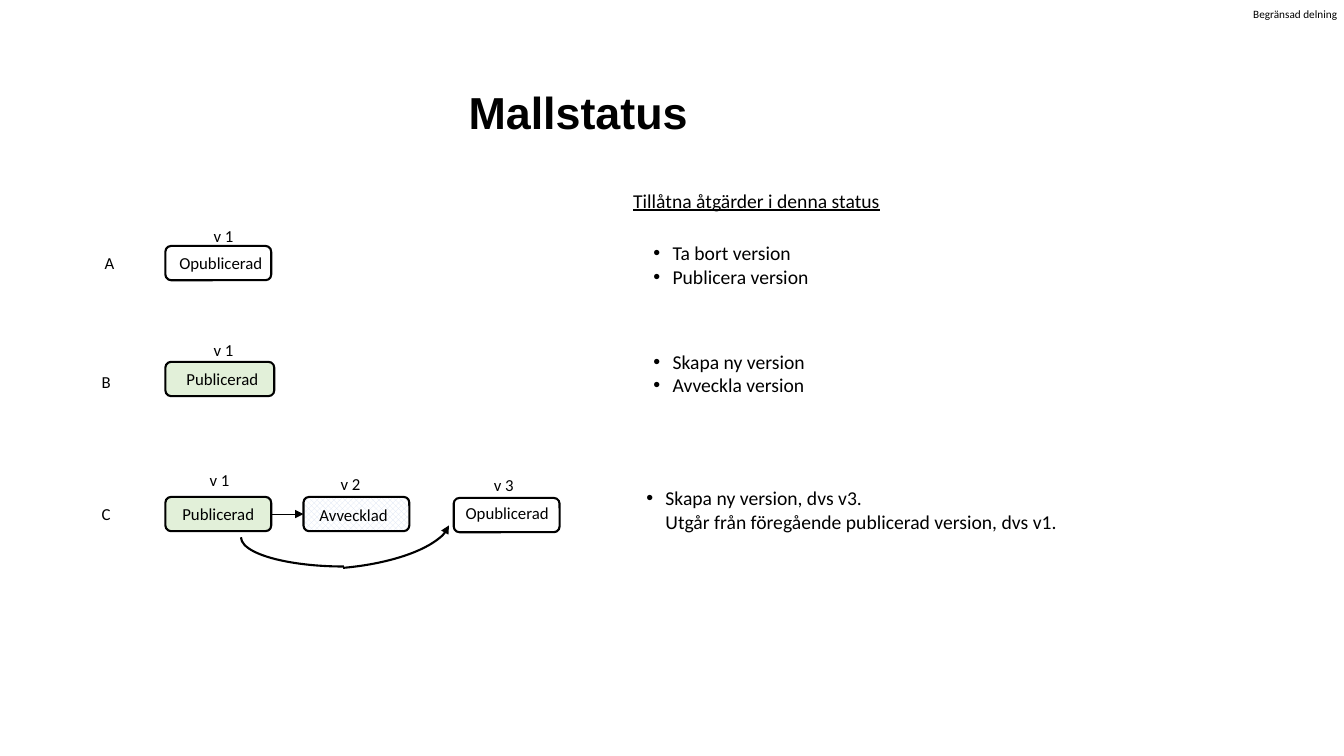
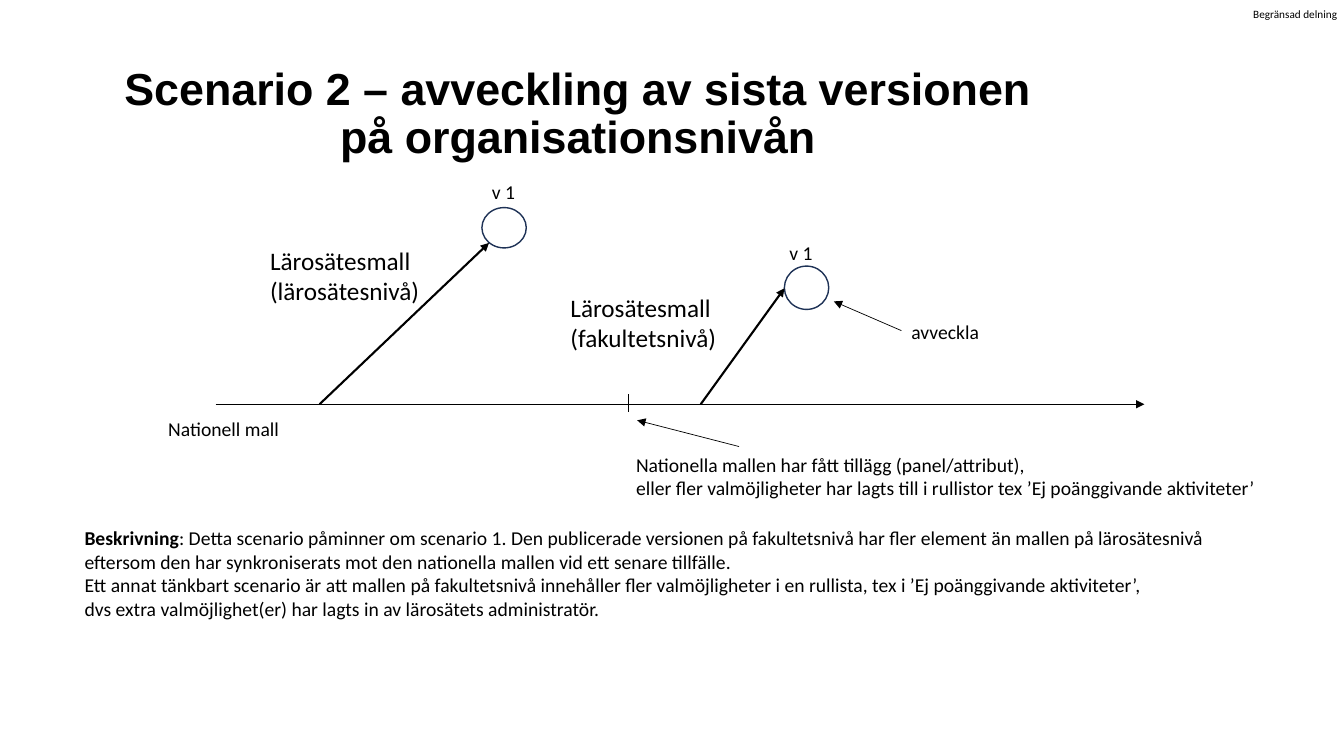
"""Build two slides on template statuses and a template versioning scenario."""
import copy
from dataclasses import dataclass

import lxml.etree
import pptx
import pptx.dml.color
import pptx.enum.dml
import pptx.enum.shapes
import pptx.enum.text
import pptx.oxml.ns
import pptx.presentation
import pptx.shapes.autoshape
import pptx.shapes.connector
import pptx.slide
import pptx.text.text
import pptx.util

EMU_PER_PX = 9144
BLACK, WHITE, GREEN, PALE_BLUE, NAVY = "000000", "FFFFFF", "E2F0D9", "DAE3F3", "1E3256"
BODY_FONT, TITLE_FONT = "Calibri", "Arial"
SHAPES = pptx.enum.shapes.MSO_SHAPE
ALIGN = pptx.enum.text.PP_ALIGN
ANCHOR = pptx.enum.text.MSO_ANCHOR
TITLE_ONLY_LAYOUT, COMPARISON_LAYOUT = 5, 4
STATUS_LEFT, STATUS_HEIGHT = 164, 34
LIST_INDENT = 19
TIMELINE_Y = 401


@dataclass(frozen=True)
class Label:
    """A piece of text and the box that holds it."""

    text: str
    left: int
    top: int
    width: int
    height: int = 30
    size: int = 12


@dataclass(frozen=True)
class Status:
    """A version box with its fill, its name and its version number."""

    left: int
    top: int
    width: int
    fill: str | None
    name: Label
    version: Label


@dataclass(frozen=True)
class Stroke:
    """A straight line, with or without an arrowhead at its end."""

    start: tuple[int, int]
    end: tuple[int, int]
    width: float = 0.5
    arrow: bool = True


STATUSES = [
    Status(STATUS_LEFT, 244, 105, None, Label("Opublicerad", 168, 246, 110), Label("v 1", 202, 219, 50)),
    Status(STATUS_LEFT, 359, 108, GREEN, Label("Publicerad", 175, 361, 108), Label("v 1", 202, 332, 50)),
    Status(STATUS_LEFT, 493, 105, GREEN, Label("Publicerad", 171, 495, 105), Label("v 1", 198, 461, 50)),
    Status(301, 493, 105, PALE_BLUE, Label("Avvecklad", 307, 496, 105), Label("v 2", 328, 465, 50)),
    Status(450, 494, 105, None, Label("Opublicerad", 452, 494, 110), Label("v 3", 480, 466, 50)),
]
ROW_LETTERS = [Label("A", 94, 246, 40), Label("B", 91, 364, 40), Label("C", 91, 495, 40)]
ACTIONS_HEADING = Label("Tillåtna åtgärder i denna status", 618, 182, 300, 34, 14)
ACTION_LISTS = [
    Label("Ta bort version\nPublicera version", 638, 234, 220, 57, 14),
    Label("Skapa ny version\nAvveckla version", 638, 342, 220, 57, 14),
    Label("Skapa ny version, dvs v3.\vUtgår från föregående publicerad version, dvs v1.", 631, 477, 450, 57, 14),
]
SCENARIO_LABELS = [
    Label("v 1", 478, 174, 60, 34, 14),
    Label("v 1", 773, 234, 60, 34, 14),
    Label("Nationell mall", 157, 409, 177, 34, 14),
    Label("avveckla", 894, 312, 100, 34, 14),
    Label("Lärosätesmall\v(lärosätesnivå)", 258, 238, 190, 71, 18),
    Label("Lärosätesmall\v(fakultetsnivå)", 556, 285, 190, 71, 18),
    Label("Nationella mallen har fått tillägg (panel/attribut),\veller fler valmöjligheter har lagts till "
          "i rullistor tex ’Ej poänggivande aktiviteter’", 621, 444, 669, 57, 14),
]
DESCRIPTION = Label("Beskrivning", 74, 517, 1180, 104, 14)
DESCRIPTION_LINES = [
    ": Detta scenario påminner om scenario 1. Den publicerade versionen på fakultetsnivå har fler element "
    "än mallen på lärosätesnivå",
    "eftersom den har synkroniserats mot den nationella mallen vid ett senare tillfälle.",
    "Ett annat tänkbart scenario är att mallen på fakultetsnivå innehåller fler valmöjligheter i en rullista, "
    "tex i ’Ej poänggivande aktiviteter’,",
    "dvs extra valmöjlighet(er) har lagts in av lärosätets administratör.",
]
VERSION_CIRCLES = [(478, 206, 44, 40), (778, 264, 44, 43)]
SCENARIO_STROKES = [
    Stroke((214, TIMELINE_Y), (1135, TIMELINE_Y)),
    Stroke((317, TIMELINE_Y), (485, 241), 1.5),
    Stroke((695, TIMELINE_Y), (778, 286), 1.5),
    Stroke((894, 328), (827, 299)),
    Stroke((623, 391), (623, 409), arrow=False),
    Stroke((733, 443), (632, 417)),
]


def px(value: int) -> pptx.util.Emu:
    """Turn px into EMU."""
    return pptx.util.Emu(value * EMU_PER_PX)


def color(value: str) -> pptx.dml.color.RGBColor:
    """Turn a hex string into a colour."""
    return pptx.dml.color.RGBColor.from_string(value)


def place(shape: pptx.shapes.autoshape.Shape, left: int, top: int, width: int, height: int) -> None:
    """Move and size a shape."""
    shape.left, shape.top, shape.width, shape.height = px(left), px(top), px(width), px(height)


def format_text(frame: pptx.text.text.TextFrame, size: int, font: str = BODY_FONT,
                bold: bool = False, underline: bool = False) -> None:
    """Format every run and line break of a text frame."""
    frame.word_wrap = True
    frame.auto_size = pptx.enum.text.MSO_AUTO_SIZE.NONE
    for paragraph in frame.paragraphs:
        paragraph.space_before = pptx.util.Pt(0)
        for run in paragraph.runs:
            run.font.name, run.font.size = font, pptx.util.Pt(size)
            run.font.bold, run.font.underline = bold, underline
            run.font.color.rgb = color(BLACK)
        properties = paragraph.runs[-1].font._element
        for line_break in paragraph._p.findall(pptx.oxml.ns.qn("a:br")):
            line_break.insert(0, copy.deepcopy(properties))


def add_label(slide: pptx.slide.Slide, label: Label) -> pptx.shapes.autoshape.Shape:
    """Add a text box."""
    box = slide.shapes.add_textbox(px(label.left), px(label.top), px(label.width), px(label.height))
    box.text_frame.text = label.text
    format_text(box.text_frame, label.size)
    return box


def fill_placeholder(shape: pptx.shapes.autoshape.Shape, label: Label, bullets: bool) -> None:
    """Write a bulleted list or an underlined heading in a body placeholder."""
    place(shape, label.left, label.top, label.width, label.height)
    frame = shape.text_frame
    frame.text = label.text
    frame.vertical_anchor = ANCHOR.TOP
    if bullets:
        for paragraph in frame.paragraphs:
            properties = paragraph._p.get_or_add_pPr()
            properties.set("marL", str(px(LIST_INDENT)))
            properties.set("indent", str(-px(LIST_INDENT)))
            lxml.etree.SubElement(properties, pptx.oxml.ns.qn("a:buFont")).set("typeface", TITLE_FONT)
            lxml.etree.SubElement(properties, pptx.oxml.ns.qn("a:buChar")).set("char", "•")
    format_text(frame, label.size, underline=not bullets)


def add_outline(slide: pptx.slide.Slide, kind: pptx.enum.shapes.MSO_SHAPE, left: int, top: int, width: int,
                height: int, line: str = BLACK, weight: float = 1.5) -> pptx.shapes.autoshape.Shape:
    """Add an unfilled preset shape."""
    shape = slide.shapes.add_shape(kind, px(left), px(top), px(width), px(height))
    shape.shadow.inherit = False
    shape.fill.background()
    shape.line.color.rgb = color(line)
    shape.line.width = pptx.util.Pt(weight)
    return shape


def add_arrowhead(shape: pptx.shapes.autoshape.Shape | pptx.shapes.connector.Connector, end: str) -> None:
    """Put a triangle at one end of a line."""
    line = shape.element.spPr.find(pptx.oxml.ns.qn("a:ln"))
    lxml.etree.SubElement(line, pptx.oxml.ns.qn(end)).set("type", "triangle")


def add_stroke(slide: pptx.slide.Slide, stroke: Stroke) -> pptx.shapes.connector.Connector:
    """Add a straight connector."""
    connector = slide.shapes.add_connector(
        pptx.enum.shapes.MSO_CONNECTOR.STRAIGHT, *map(px, stroke.start + stroke.end))
    connector.line.color.rgb = color(BLACK)
    connector.line.width = pptx.util.Pt(stroke.width)
    if stroke.arrow:
        add_arrowhead(connector, "a:tailEnd")
    lxml.etree.SubElement(connector.element.spPr, pptx.oxml.ns.qn("a:effectLst"))
    return connector


def add_status(slide: pptx.slide.Slide, status: Status) -> pptx.shapes.autoshape.Shape:
    """Add a version box with its name and version number."""
    box = add_outline(slide, SHAPES.ROUNDED_RECTANGLE, status.left, status.top, status.width, STATUS_HEIGHT)
    if status.fill == PALE_BLUE:
        box.fill.patterned()
        box.fill.pattern = pptx.enum.dml.MSO_PATTERN.OUTLINED_DIAMOND
        box.fill.fore_color.rgb, box.fill.back_color.rgb = color(PALE_BLUE), color(WHITE)
    elif status.fill:
        box.fill.solid()
        box.fill.fore_color.rgb = color(status.fill)
    add_label(slide, status.name)
    add_label(slide, status.version)
    return box


def add_slide(presentation: pptx.presentation.Presentation, layout: int, title: str) -> pptx.slide.Slide:
    """Add a slide with the shared title style."""
    slide = presentation.slides.add_slide(presentation.slide_layouts[layout])
    shape = slide.shapes.title
    place(shape, 92, 74, 963, 80)
    frame = shape.text_frame
    frame.text = title
    frame.vertical_anchor = ANCHOR.MIDDLE
    frame.paragraphs[0].alignment = ALIGN.CENTER
    frame.paragraphs[0].line_spacing = 0.9
    format_text(frame, 32, TITLE_FONT, bold=True)
    return slide


def add_master_marking(presentation: pptx.presentation.Presentation, slide: pptx.slide.Slide) -> None:
    """Put the sharing notice on the slide master."""
    marking = add_label(slide, Label("Begränsad delning", 1243, 7, 90, 13, 8))
    frame = marking.text_frame
    frame.margin_left = frame.margin_top = frame.margin_right = frame.margin_bottom = 0
    marking.element.nvSpPr.cNvPr.set("id", "100")
    presentation.slide_master.shapes.element.append(marking.element)


def build_status_slide(presentation: pptx.presentation.Presentation) -> None:
    """Build the overview of statuses and allowed actions."""
    slide = add_slide(presentation, COMPARISON_LAYOUT, "Mallstatus")
    add_master_marking(presentation, slide)
    heading, *lists = list(slide.placeholders)[1:]
    fill_placeholder(heading, ACTIONS_HEADING, bullets=False)
    for shape, label in zip(lists, ACTION_LISTS):
        fill_placeholder(shape, label, bullets=True)
    boxes = [add_status(slide, status) for status in STATUSES]
    for letter in ROW_LETTERS:
        add_label(slide, letter)
    arrow = add_stroke(slide, Stroke((269, 510), (301, 510)))
    arrow.begin_connect(boxes[2], 3)
    arrow.end_connect(boxes[3], 1)
    curve_start = add_outline(slide, SHAPES.ARC, 239, 504, 204, 58)
    curve_start.rotation = 180
    curve_end = add_outline(slide, SHAPES.ARC, 298, 415, 78, 219)
    curve_end.rotation = 85.1
    curve_end.adjustments[0] = 163.89
    add_arrowhead(curve_end, "a:headEnd")


def build_scenario_slide(presentation: pptx.presentation.Presentation) -> None:
    """Build the timeline of the second scenario."""
    slide = add_slide(presentation, TITLE_ONLY_LAYOUT,
                      "Scenario 2 – avveckling av sista versionen på organisationsnivån")
    for circle in VERSION_CIRCLES:
        add_outline(slide, SHAPES.OVAL, *circle, NAVY, 1)
    for stroke in SCENARIO_STROKES:
        add_stroke(slide, stroke)
    for label in SCENARIO_LABELS:
        add_label(slide, label)
    frame = add_label(slide, DESCRIPTION).text_frame
    paragraph = frame.paragraphs[0]
    for index, line in enumerate(DESCRIPTION_LINES):
        if index:
            paragraph.add_line_break()
        paragraph.add_run().text = line
    format_text(frame, DESCRIPTION.size)
    paragraph.runs[0].font.bold = True


def main() -> None:
    """Build and save the presentation."""
    presentation = pptx.Presentation()
    presentation.slide_width, presentation.slide_height = px(1333), px(750)
    build_status_slide(presentation)
    build_scenario_slide(presentation)
    presentation.save("out.pptx")


if __name__ == "__main__":
    main()
